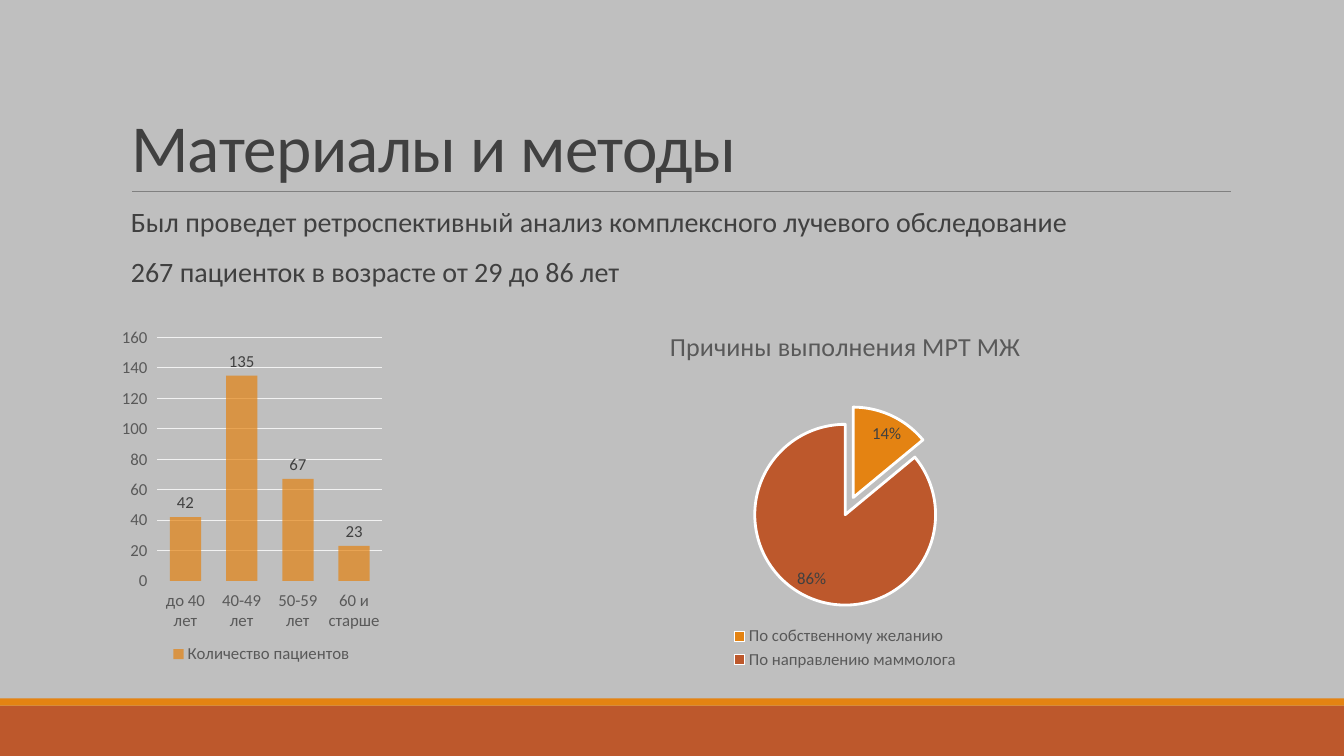
from dataclasses import dataclass

from lxml import etree
from pptx import Presentation
from pptx.chart.chart import Chart
from pptx.chart.data import CategoryChartData
from pptx.dml.color import RGBColor
from pptx.enum.chart import XL_CHART_TYPE, XL_LABEL_POSITION, XL_LEGEND_POSITION
from pptx.enum.shapes import MSO_CONNECTOR, MSO_SHAPE
from pptx.enum.text import MSO_ANCHOR, MSO_AUTO_SIZE, PP_ALIGN
from pptx.oxml.ns import qn
from pptx.slide import Slide
from pptx.util import Inches, Pt

COLUMN = XL_CHART_TYPE.COLUMN_CLUSTERED
PIE = XL_CHART_TYPE.PIE
OUTSIDE_END = XL_LABEL_POSITION.OUTSIDE_END
BEST_FIT = XL_LABEL_POSITION.BEST_FIT
LEGEND_BOTTOM = XL_LEGEND_POSITION.BOTTOM
RECTANGLE = MSO_SHAPE.RECTANGLE
STRAIGHT = MSO_CONNECTOR.STRAIGHT
BOTTOM = MSO_ANCHOR.BOTTOM
NO_AUTOFIT = MSO_AUTO_SIZE.NONE
LEFT = PP_ALIGN.LEFT

BACKGROUND = RGBColor(0xBF, 0xBF, 0xBF)
ORANGE = RGBColor(0xE4, 0x83, 0x12)
RUST = RGBColor(0xBD, 0x58, 0x2C)
RULE_GRAY = RGBColor(0x80, 0x80, 0x80)
TEXT_DARK = RGBColor(0x40, 0x40, 0x40)
TEXT_GRAY = RGBColor(0x59, 0x59, 0x59)
GRID = RGBColor(0xF2, 0xF2, 0xF2)
WHITE = RGBColor(0xFF, 0xFF, 0xFF)
FONT = "Calibri"

Box = tuple[float, float, float, float]


@dataclass(frozen=True)
class Band:
    top: float
    height: float
    color: RGBColor


@dataclass(frozen=True)
class ChartPanel:
    kind: XL_CHART_TYPE
    box: Box
    series_name: str
    values: dict[str, float]
    number_format: str
    label_position: XL_LABEL_POSITION
    legend_box: Box


BANDS = [Band(7, 0.5, RUST), Band(6.93, 0.07, ORANGE)]
SUMMARY = [
    "Был проведет ретроспективный анализ комплексного лучевого обследование",
    "267 пациенток в возрасте от 29 до 86 лет",
]
AGES = ChartPanel(
    COLUMN, (0.95, 0.98, 5.87, 5.71), "Количество пациентов",
    {"до 40 лет": 42, "40-49 лет": 135, "50-59 лет": 67, "60 и старше": 23},
    "General", OUTSIDE_END, (0.11, 0.94, 0.34, 0.05),
)
REASONS = ChartPanel(
    PIE, (6.12, 3.08, 4.53, 3.6), "Причины выполнения МРТ МЖ",
    {"По собственному желанию": 0.14, "По направлению маммолога": 0.86},
    "0%", BEST_FIT, (0.25, 0.86, 0.5, 0.14),
)


def style_font(font, size: float, color: RGBColor) -> None:
    font.name = FONT
    font.size = Pt(size)
    font.color.rgb = color


def set_layout(parent, index: int, box: Box, inner: bool = False) -> None:
    for existing in parent.findall(qn("c:layout")):
        parent.remove(existing)
    layout = etree.Element(qn("c:layout"))
    manual = etree.SubElement(layout, qn("c:manualLayout"))
    settings = [("layoutTarget", "inner")] if inner else []
    settings += [("xMode", "edge"), ("yMode", "edge")]
    settings += zip("xywh", map(str, box))
    for tag, value in settings:
        etree.SubElement(manual, qn(f"c:{tag}")).set("val", value)
    parent.insert(index, layout)


def add_bands(slide: Slide, width: int) -> None:
    for band in BANDS:
        strip = slide.shapes.add_shape(
            RECTANGLE, 0, Inches(band.top), width, Inches(band.height))
        strip.shadow.inherit = False
        strip.fill.solid()
        strip.fill.fore_color.rgb = band.color
        strip.line.fill.background()


def add_heading(slide: Slide) -> None:
    heading = slide.shapes.title
    heading.left, heading.top = Inches(1.2), Inches(0.31)
    heading.width, heading.height = Inches(11), Inches(1.59)
    frame = heading.text_frame
    frame.auto_size = NO_AUTOFIT
    frame.vertical_anchor = BOTTOM
    paragraph = frame.paragraphs[0]
    paragraph.alignment = LEFT
    paragraph.line_spacing = 0.85
    run = paragraph.add_run()
    run.text = "Материалы и методы"
    style_font(run.font, 48, TEXT_DARK)
    run.font._element.set("spc", "-50")

    rule = slide.shapes.add_connector(
        STRAIGHT, Inches(1.31), Inches(1.9), Inches(12.21), Inches(1.9))
    rule.line.color.rgb = RULE_GRAY
    rule.line.width = Pt(0.5)
    etree.SubElement(rule.element.spPr, qn("a:effectLst"))


def add_summary(slide: Slide) -> None:
    summary = slide.shapes.add_textbox(
        Inches(1.2), Inches(2.02), Inches(11), Inches(1.06))
    frame = summary.text_frame
    frame.word_wrap = True
    frame.margin_left, frame.margin_right = Inches(0.1), 0
    for index, sentence in enumerate(SUMMARY):
        paragraph = frame.add_paragraph() if index else frame.paragraphs[0]
        paragraph.line_spacing = 0.9
        paragraph.space_before, paragraph.space_after = Pt(12), Pt(2)
        run = paragraph.add_run()
        run.text = sentence
        style_font(run.font, 20, TEXT_DARK)


def add_panel(slide: Slide, panel: ChartPanel) -> Chart:
    chart_data = CategoryChartData(number_format=panel.number_format)
    chart_data.categories = list(panel.values)
    chart_data.add_series(panel.series_name, list(panel.values.values()))
    chart = slide.shapes.add_chart(
        panel.kind, *map(Inches, panel.box), chart_data).chart
    chart.font.name = FONT
    chart.font.size = Pt(10)
    chart.has_title = False
    chart.has_legend = True
    chart.legend.position = LEGEND_BOTTOM
    chart.legend.include_in_layout = False
    style_font(chart.legend.font, 12, TEXT_GRAY)
    set_layout(chart.element.find(".//" + qn("c:legend")), 1, panel.legend_box)
    labels = chart.plots[0].series[0].data_labels
    labels.show_value = True
    labels.number_format = panel.number_format
    labels.number_format_is_linked = False
    labels.position = panel.label_position
    style_font(labels.font, 12, TEXT_DARK)
    return chart


def add_ages(slide: Slide) -> None:
    chart = add_panel(slide, AGES)
    plot = chart.plots[0]
    plot.vary_by_categories = False
    plot.gap_width, plot.overlap = 80, 25
    fill = plot.series[0].format.fill
    fill.solid()
    fill.fore_color.rgb = ORANGE
    bar_color = chart.element.xpath(".//c:ser/c:spPr/a:solidFill/a:srgbClr")[0]
    etree.SubElement(bar_color, qn("a:alpha")).set("val", "70000")
    for axis in (chart.category_axis, chart.value_axis):
        style_font(axis.tick_labels.font, 12, TEXT_GRAY)
    chart.category_axis.format.line.color.rgb = BACKGROUND
    chart.category_axis.format.line.width = Pt(1.25)
    chart.value_axis.format.line.fill.background()
    gridlines = chart.value_axis.major_gridlines.format.line
    gridlines.color.rgb = GRID
    gridlines.width = Pt(0.75)
    set_layout(chart.element.find(".//" + qn("c:plotArea")), 0,
               (0.104, 0.415, 0.38, 0.423), inner=True)


def add_reasons(slide: Slide) -> None:
    chart = add_panel(slide, REASONS)
    chart.has_title = True
    title_run = chart.chart_title.text_frame.paragraphs[0].add_run()
    title_run.text = REASONS.series_name
    style_font(title_run.font, 18.6, TEXT_GRAY)
    title_run.font.bold = False
    plot = chart.plots[0]
    plot.vary_by_categories = True
    for index, color in enumerate((ORANGE, RUST)):
        slice_format = plot.series[0].points[index].format
        slice_format.fill.solid()
        slice_format.fill.fore_color.rgb = color
        slice_format.line.color.rgb = WHITE
        slice_format.line.width = Pt(2)
    explosion = etree.Element(qn("c:explosion"))
    explosion.set("val", "21")
    chart.element.xpath(".//c:dPt/c:spPr")[0].addprevious(explosion)


def main() -> None:
    deck = Presentation()
    deck.slide_width, deck.slide_height = Inches(13.33), Inches(7.5)
    slide = deck.slides.add_slide(deck.slide_layouts[5])
    slide.background.fill.solid()
    slide.background.fill.fore_color.rgb = BACKGROUND
    add_bands(slide, deck.slide_width)
    add_heading(slide)
    add_summary(slide)
    add_ages(slide)
    add_reasons(slide)
    deck.save("out.pptx")


if __name__ == "__main__":
    main()
